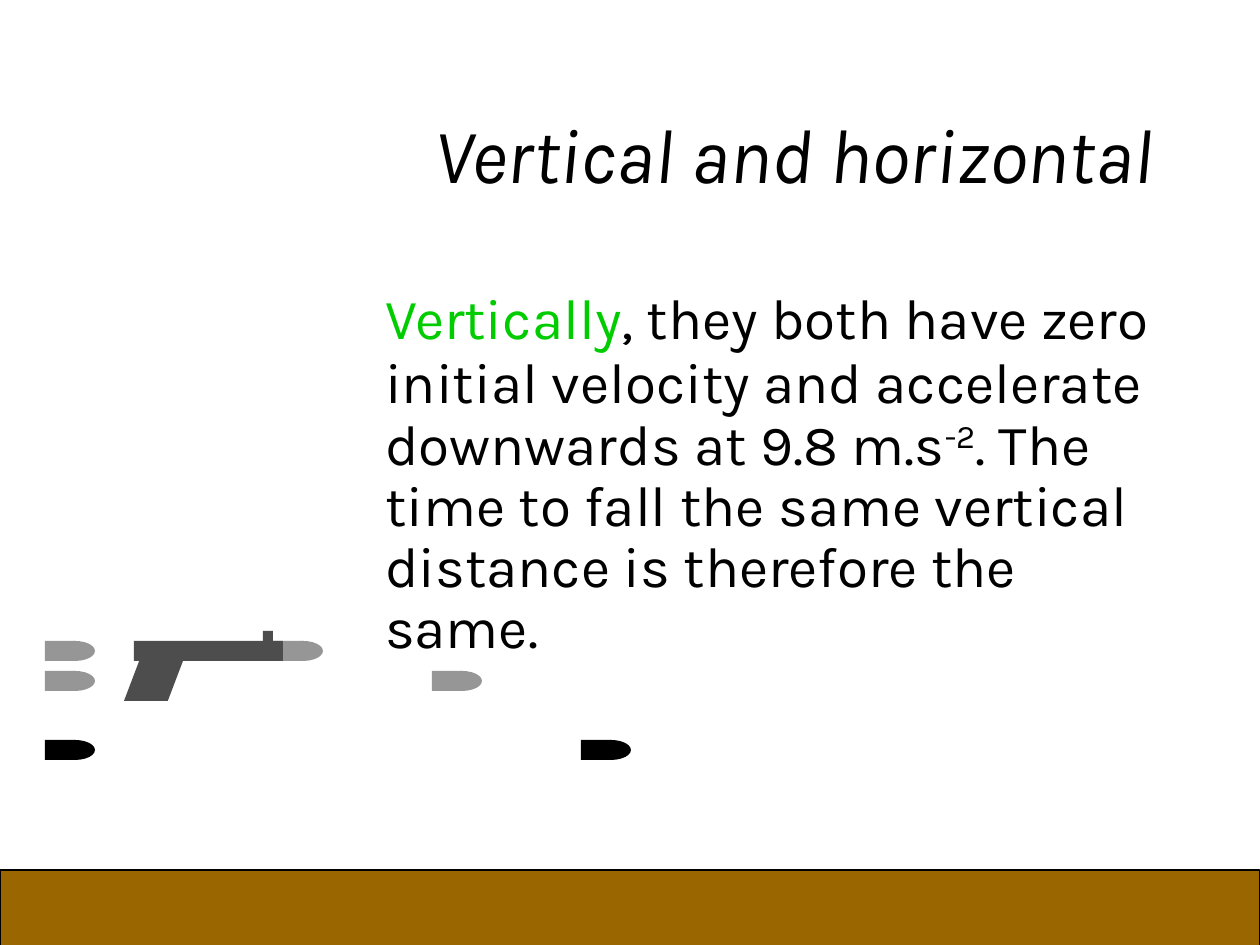
import pptx
import pptx.dml.color
import pptx.enum.shapes
import pptx.enum.text
import pptx.oxml
import pptx.oxml.ns
import pptx.util

EMU_PER_PX = 8064
FONT = "Karla"
BLACK, GREY, GUN_GREY = "000000", "969696", "4D4D4D"
GREEN, BROWN = "00CC00", "996600"
KIND = pptx.enum.shapes.MSO_SHAPE
SHADOW_XML = (
    f'<a:effectLst {pptx.oxml.ns.nsdecls("a")}>'
    '<a:outerShdw dist="25400" dir="2700000"><a:srgbClr val="969696"/>'
    "</a:outerShdw></a:effectLst>"
)
NO_BULLET_XML = f'<a:buNone {pptx.oxml.ns.nsdecls("a")}/>'


def px(length):
    return pptx.util.Emu(length * EMU_PER_PX)


def color(hex_string):
    return pptx.dml.color.RGBColor.from_string(hex_string)


def add_shape(shapes, kind, left, top, width, height, fill, outline=None):
    shape = shapes.add_shape(kind, px(left), px(top), px(width), px(height))
    shape.shadow.inherit = False
    shape.fill.solid()
    shape.fill.fore_color.rgb = color(fill)
    if outline:
        shape.line.color.rgb = color(outline)
        shape.line.width = pptx.util.Pt(0.75)
    else:
        shape.line.fill.background()
    return shape


def add_bullet(slide, left, top, fill):
    """A cartridge: a square-ended case with a rounded nose."""
    group = slide.shapes.add_group_shape()
    add_shape(group.shapes, KIND.RECTANGLE, left, top, 30, 20, fill)
    add_shape(group.shapes, KIND.OVAL, left + 10, top, 40, 20, fill)


def add_gun(slide, left, top):
    group = slide.shapes.add_group_shape()
    grip = add_shape(group.shapes, KIND.PARALLELOGRAM, left, top + 30, 59, 40, GUN_GREY)
    grip.adjustments[0] = 0.38
    add_shape(group.shapes, KIND.RECTANGLE, left + 10, top + 10, 149, 20, GUN_GREY)
    add_shape(group.shapes, KIND.RECTANGLE, left + 139, top, 10, 10, GUN_GREY)


def place_text(placeholder, left, top, width, height, anchor):
    placeholder.left, placeholder.top = px(left), px(top)
    placeholder.width, placeholder.height = px(width), px(height)
    frame = placeholder.text_frame
    frame.word_wrap = True
    frame.auto_size = pptx.enum.text.MSO_AUTO_SIZE.NONE
    frame.vertical_anchor = anchor
    frame.margin_left = frame.margin_right = px(12)
    frame.margin_top = frame.margin_bottom = px(7)
    return frame.paragraphs[0]


def add_run(paragraph, text, size, fill=BLACK, italic=False, raised=False):
    run = paragraph.add_run()
    run.text = text
    run.font.size = pptx.util.Pt(size)
    run.font.italic = italic
    run.font.color.rgb = color(fill)
    properties = run.font._element
    properties.append(pptx.oxml.parse_xml(SHADOW_XML))
    run.font.name = FONT
    if raised:
        properties.set("baseline", "30000")


def fill_title(slide):
    paragraph = place_text(slide.shapes.title, 315, 64, 850, 178,
                           pptx.enum.text.MSO_ANCHOR.MIDDLE)
    paragraph.alignment = pptx.enum.text.PP_ALIGN.RIGHT
    add_run(paragraph, "Vertical and horizontal", 49, italic=True)


def fill_body(slide):
    paragraph = place_text(slide.placeholders[1], 325, 273, 840, 293,
                           pptx.enum.text.MSO_ANCHOR.TOP)
    paragraph.line_spacing = 0.9
    paragraph.space_before = pptx.util.Pt(8)
    # Hanging indent without a bullet
    properties = paragraph._p.get_or_add_pPr()
    properties.set("marL", str(px(48)))
    properties.set("indent", str(px(-48)))
    properties.append(pptx.oxml.parse_xml(NO_BULLET_XML))
    add_run(paragraph, "\t", 44)
    add_run(paragraph, "Vertically", 36, GREEN)
    add_run(paragraph, ", they both have zero initial velocity and accelerate "
                       "downwards at 9.8 m.s", 36)
    add_run(paragraph, "-2", 36, raised=True)
    add_run(paragraph, ". The time to fall the same vertical distance is "
                       "therefore the same.", 36)


def main():
    presentation = pptx.Presentation()
    presentation.slide_width, presentation.slide_height = px(1260), px(945)
    slide = presentation.slides.add_slide(presentation.slide_layouts[1])

    # Text
    fill_title(slide)
    fill_body(slide)

    # Ground
    add_shape(slide.shapes, KIND.RECTANGLE, 0, 870, 1260, 100, BROWN, BLACK)

    # Each moment: a dropped bullet and a fired one at the same height
    for top, fired_left, fill in ((641, 273, GREY), (671, 432, GREY), (740, 581, BLACK)):
        add_bullet(slide, 45, top, fill)
        add_bullet(slide, fired_left, top, fill)

    # Gun, over the first fired bullet
    add_gun(slide, 124, 631)

    presentation.save("out.pptx")


if __name__ == "__main__":
    main()
